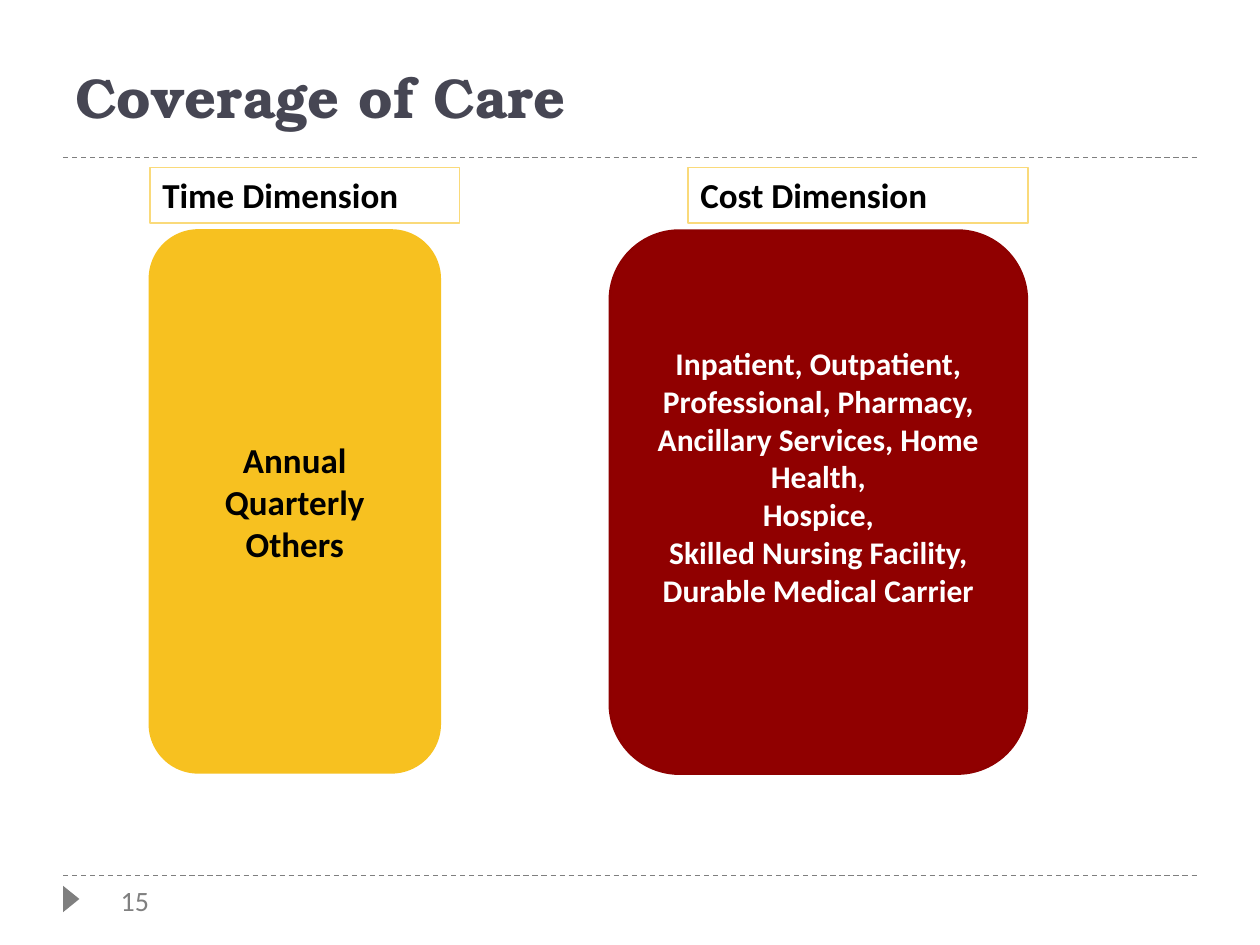
from dataclasses import dataclass
from typing import Optional

from lxml.etree import SubElement
from pptx import Presentation
from pptx.dml.color import RGBColor
from pptx.enum.dml import MSO_LINE
from pptx.enum.shapes import MSO_CONNECTOR, MSO_SHAPE
from pptx.enum.text import MSO_ANCHOR, PP_ALIGN
from pptx.oxml.ns import qn
from pptx.util import Inches, Pt

COLORS = {
    "rule": "7F7F7F",
    "number": "808080",
    "title": "464653",
    "black": "000000",
    "white": "FFFFFF",
    "gold": "F7C120",
    "pale_gold": "FADA7A",
    "red": "900000",
    "dark_red": "8E0000",
}


@dataclass
class TextStyle:
    size: float
    color: str
    bold: bool = True
    font: str = "Calibri"
    align: PP_ALIGN = PP_ALIGN.LEFT
    anchor: MSO_ANCHOR = MSO_ANCHOR.TOP


@dataclass
class Block:
    left: float
    top: float
    width: float
    height: float
    lines: list[str]
    style: TextStyle
    shape: MSO_SHAPE = MSO_SHAPE.RECTANGLE
    fill: Optional[str] = None
    line: Optional[str] = None
    line_width: float = 0.75
    bottom_inset: float = 0.05
    wrap: bool = True


def color(name: str) -> RGBColor:
    return RGBColor.from_string(COLORS[name])


def write_text(shape, block: Block) -> None:
    frame = shape.text_frame
    frame.word_wrap = block.wrap
    frame.vertical_anchor = block.style.anchor
    frame.margin_bottom = Inches(block.bottom_inset)
    frame.text = "\n".join(block.lines)
    for para in frame.paragraphs:
        para.alignment = block.style.align
        para.font.size = Pt(block.style.size)
        para.font.name = block.style.font
        para.font.bold = block.style.bold
        para.font.color.rgb = color(block.style.color)


def add_block(page, block: Block) -> None:
    bounds = [Inches(n) for n in (block.left, block.top, block.width, block.height)]
    if block.fill is None:
        box = page.shapes.add_textbox(*bounds)
    else:
        box = page.shapes.add_shape(block.shape, *bounds)
        box.shadow.inherit = False
        box.fill.solid()
        box.fill.fore_color.rgb = color(block.fill)
    if block.line:
        box.line.color.rgb = color(block.line)
        box.line.width = Pt(block.line_width)
    write_text(box, block)


def add_rule(page, top: float) -> None:
    rule = page.shapes.add_connector(
        MSO_CONNECTOR.STRAIGHT, Inches(0.5), Inches(top), Inches(9.5), Inches(top)
    )
    rule.line.color.rgb = color("rule")
    rule.line.width = Pt(0.75)
    rule.line.dash_style = MSO_LINE.DASH
    SubElement(rule._element.spPr, qn("a:effectLst"))


def add_page_marker(page) -> None:
    marker = page.shapes.add_shape(
        MSO_SHAPE.ISOSCELES_TRIANGLE, Inches(0.46), Inches(7.07), Inches(0.21), Inches(0.13)
    )
    marker.rotation = 90
    marker.shadow.inherit = False
    marker.fill.solid()
    marker.fill.fore_color.rgb = color("rule")
    marker.line.fill.background()


def card_style(size: float, text_color: str) -> TextStyle:
    return TextStyle(size, text_color, align=PP_ALIGN.CENTER, anchor=MSO_ANCHOR.MIDDLE)


TITLE = TextStyle(32, "title", font="TeX Gyre Bonum", anchor=MSO_ANCHOR.BOTTOM)
HEADING = TextStyle(20, "black")
NUMBER = TextStyle(16, "number", bold=False)

TIME_LINES = ["Annual", "Quarterly", "Others"]
COST_LINES = [
    "Inpatient, Outpatient, Professional, Pharmacy, Ancillary Services, Home Health,",
    "Hospice,",
    "Skilled Nursing Facility,",
    "Durable Medical Carrier",
]

BLOCKS = [
    Block(0.86, 6.96, 0.47, 0.37, ["15"], NUMBER, wrap=False),
    Block(0.5, 0, 9, 1.08, ["Coverage of Care"], TITLE),
    Block(1.19, 1.83, 2.3, 4.3, TIME_LINES, card_style(20, "black"),
          MSO_SHAPE.ROUNDED_RECTANGLE, "gold", "gold", 1.5),
    Block(4.84, 1.83, 3.31, 4.31, COST_LINES, card_style(18, "white"),
          MSO_SHAPE.ROUNDED_RECTANGLE, "red", "dark_red", 1.5, bottom_inset=0.46),
    Block(1.19, 1.33, 2.46, 0.44, ["Time Dimension"], HEADING, line="pale_gold"),
    Block(5.46, 1.33, 2.7, 0.44, ["Cost Dimension"], HEADING, line="pale_gold"),
]


def main() -> None:
    deck = Presentation()
    deck.slide_width = Inches(10)
    deck.slide_height = Inches(7.5)
    page = deck.slides.add_slide(deck.slide_layouts[6])
    for top in (6.95, 1.25):
        add_rule(page, top)
    add_page_marker(page)
    for block in BLOCKS:
        add_block(page, block)
    deck.save("out.pptx")


if __name__ == "__main__":
    main()
